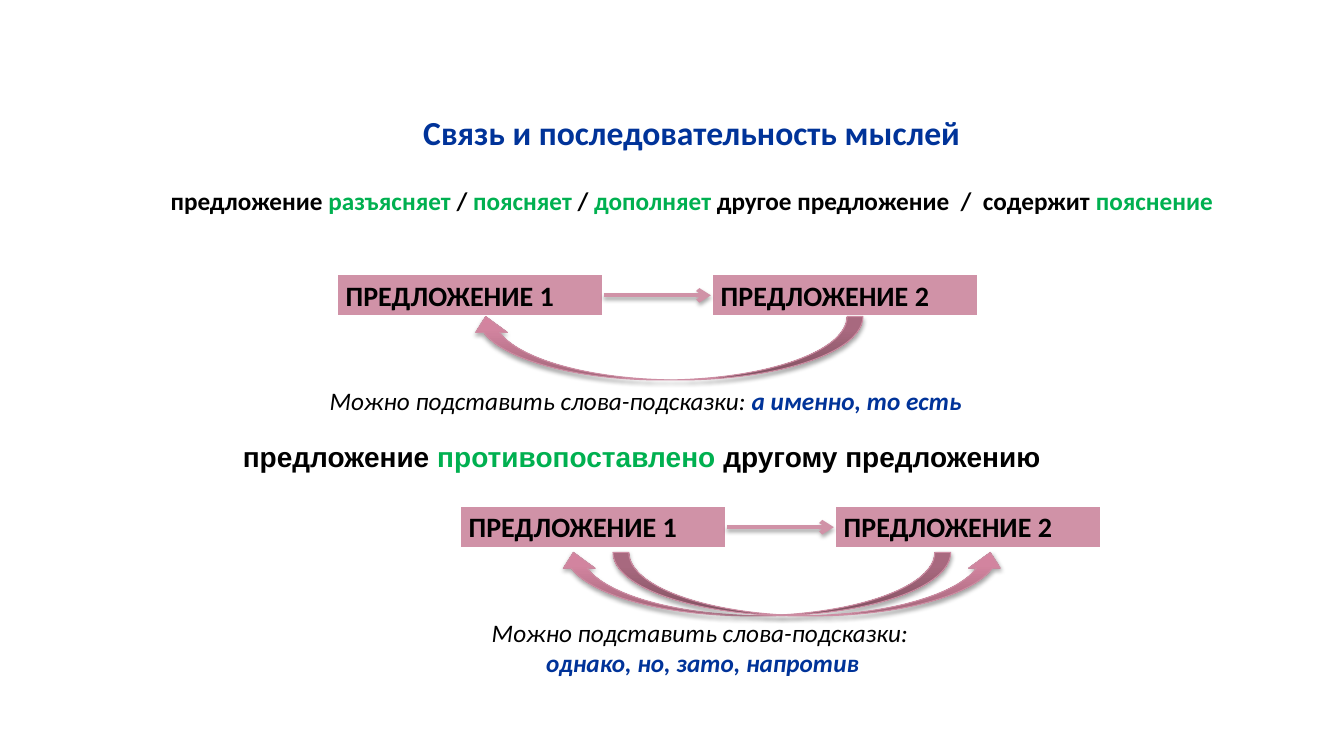
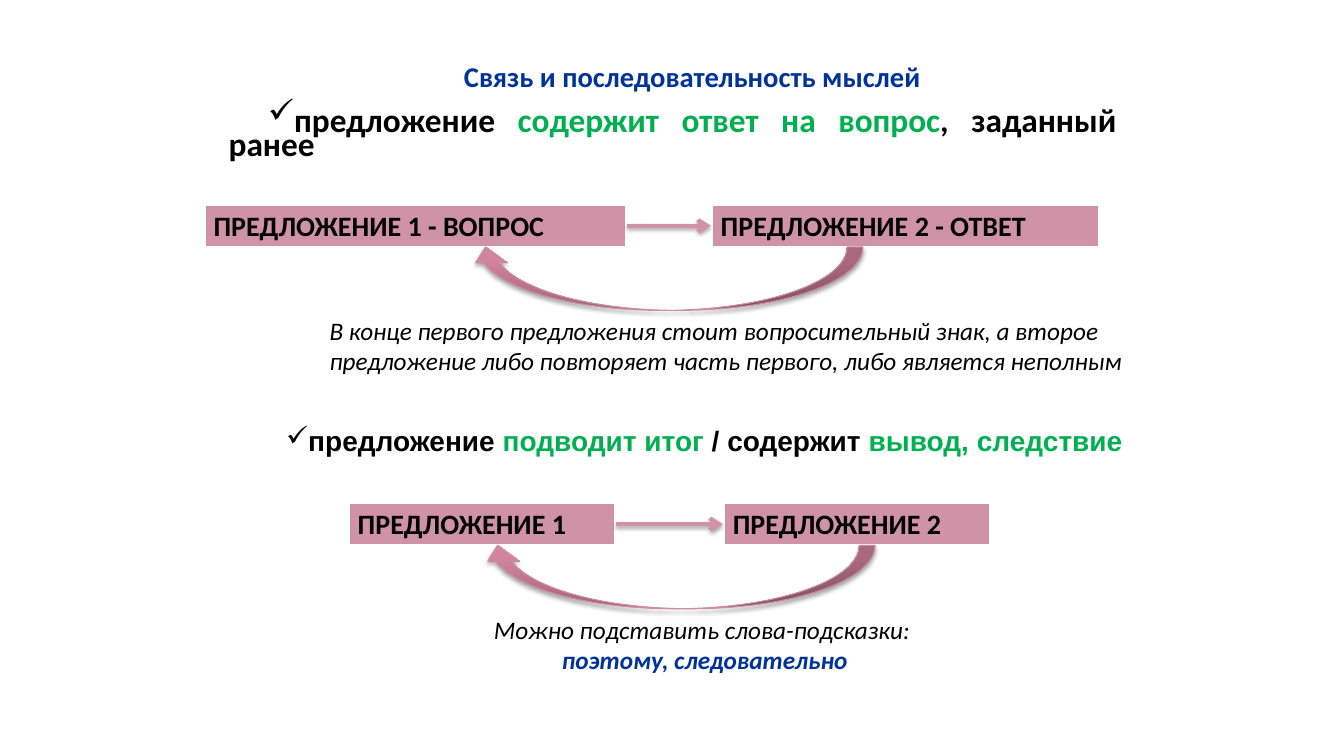
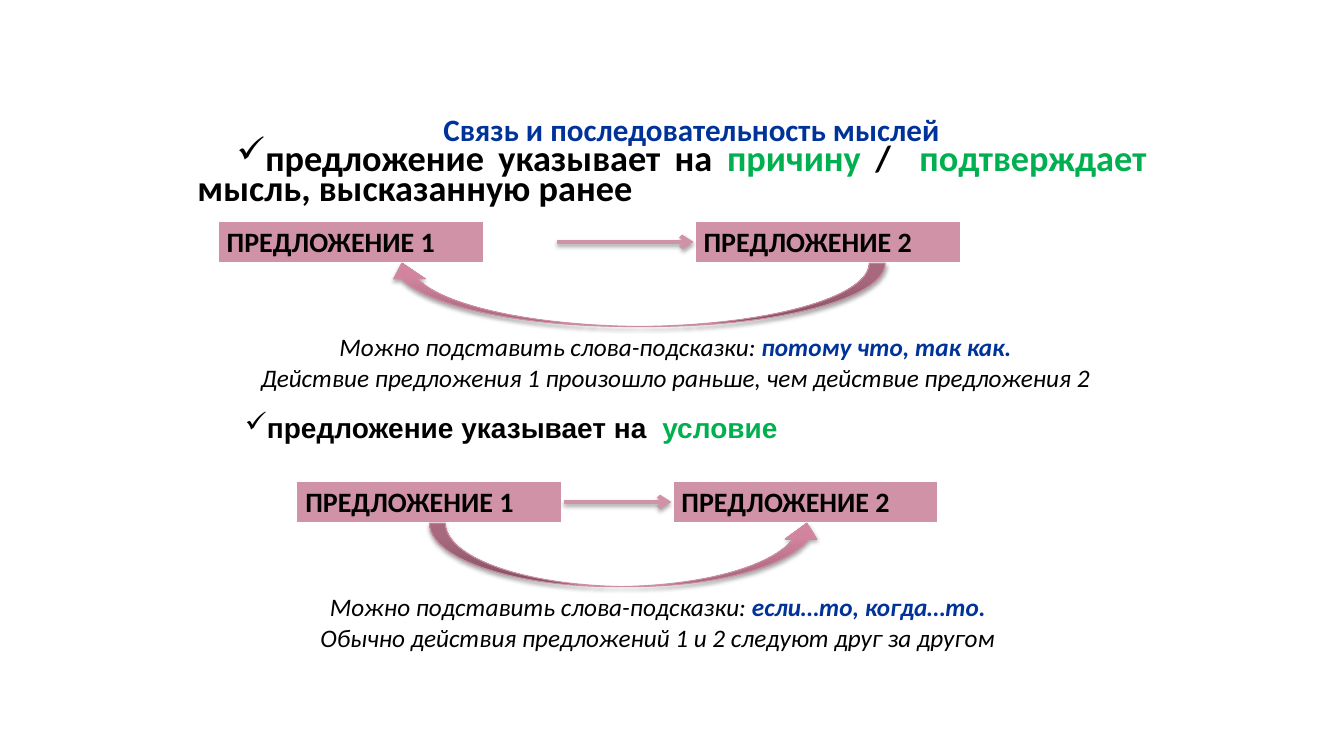
from copy import deepcopy
from dataclasses import dataclass

from lxml import etree
from pptx import Presentation
from pptx.dml.color import RGBColor
from pptx.enum.shapes import MSO_CONNECTOR, MSO_SHAPE
from pptx.enum.text import MSO_ANCHOR, PP_ALIGN
from pptx.oxml.ns import qn
from pptx.util import Inches, Pt

LEFT, CENTER, JUSTIFY = PP_ALIGN.LEFT, PP_ALIGN.CENTER, PP_ALIGN.JUSTIFY
TOP = MSO_ANCHOR.TOP
RECTANGLE, CURVED_ARROW = MSO_SHAPE.RECTANGLE, MSO_SHAPE.CURVED_UP_ARROW
STRAIGHT = MSO_CONNECTOR.STRAIGHT

BLACK, WHITE, BLUE, GREEN = "000000", "FFFFFF", "003399", "00B050"
PINK, CURVE_EDGE = "D092A7", "CD8DA3"
CURVE_STOPS = ((0, "A16478"), (0.8, "D2849F"), (1, "D5839F"))
BODY_FONT, HEADING_FONT = "Calibri", "Arial"
FIRST_LINE = 0.39
BOX_WIDTH, BOX_HEIGHT = 2.66, 0.44
CURVE_WIDTH, CURVE_HEIGHT = 3.9, 0.63
NOTE_DROP = 1.06
TITLE = "Связь и последовательность мыслей"
HINT = "Можно подставить слова-подсказки: "


@dataclass
class Span:
    text: str
    color: str = BLACK
    bold: bool = True
    italic: bool = False


@dataclass
class Para:
    spans: list[Span]
    size: float
    font: str = BODY_FONT
    align: PP_ALIGN = JUSTIFY
    spacing: float = 1.0
    before: float = 0
    margin: float = 0
    indent: float = 0
    bullet: bool = False


@dataclass
class TextArea:
    left: float
    top: float
    width: float
    height: float
    paras: list[Para]


@dataclass
class Curve:
    left: float
    width: float = CURVE_WIDTH
    drop: float = 0.43
    flipped: bool = True


@dataclass
class Scheme:
    top: float
    first_left: float
    second_left: float
    curves: list[Curve]
    note: TextArea
    first_width: float = BOX_WIDTH
    second_width: float = BOX_WIDTH
    arrow_gap: float = 0
    first_label: str = "ПРЕДЛОЖЕНИЕ 1"
    second_label: str = "ПРЕДЛОЖЕНИЕ 2"


@dataclass
class Page:
    texts: list[TextArea]
    schemes: list[Scheme]


def rgb(color: str) -> RGBColor:
    return RGBColor.from_string(color)


def title(size: float, spacing: float) -> Para:
    return Para([Span(TITLE, BLUE)], size, align=CENTER, spacing=spacing, indent=FIRST_LINE)


def point(spans: list[Span], size: float = 20, spacing: float = 0.8,
          font: str = HEADING_FONT, before: float = 0) -> Para:
    return Para(spans, size, font, spacing=spacing, before=before,
                indent=FIRST_LINE, bullet=True)


def plain(text: str) -> Span:
    return Span(text, bold=False, italic=True)


def hint(text: str) -> Span:
    return Span(text, BLUE, italic=True)


def note(left: float, top: float, width: float, lines: list[list[Span]],
         align: PP_ALIGN = CENTER, height: float = 0.71) -> TextArea:
    paras = [Para(spans, 18, align=align) for spans in lines]
    return TextArea(left, top + NOTE_DROP, width, height, paras)


def write(frame, paras: list[Para]) -> None:
    frame.word_wrap = True
    frame.vertical_anchor = TOP
    for number, item in enumerate(paras):
        para = frame.paragraphs[0] if number == 0 else frame.add_paragraph()
        para.alignment = item.align
        para.line_spacing = item.spacing
        para.space_before = Pt(item.before)
        properties = para._p.get_or_add_pPr()
        properties.set("marL", str(Inches(item.margin)))
        properties.set("indent", str(Inches(item.indent)))
        if item.bullet:
            etree.SubElement(properties, qn("a:buChar")).set("char", "✓")
        for piece in item.spans:
            span = para.add_run()
            span.text = piece.text
            span.font.name = item.font
            span.font.size = Pt(item.size)
            span.font.bold = piece.bold
            span.font.italic = piece.italic
            span.font.color.rgb = rgb(piece.color)


def add_text(page, area: TextArea) -> None:
    box = page.shapes.add_textbox(Inches(area.left), Inches(area.top),
                                  Inches(area.width), Inches(area.height))
    write(box.text_frame, area.paras)


def add_shadow(shape) -> None:
    effects = etree.SubElement(shape.element.spPr, qn("a:effectLst"))
    shadow = etree.SubElement(effects, qn("a:outerShdw"), blurRad=str(Pt(3.1)),
                              dist=str(Pt(1.8)), dir="5400000", rotWithShape="0")
    color = etree.SubElement(shadow, qn("a:srgbClr"), val=BLACK)
    etree.SubElement(color, qn("a:alpha"), val="35000")


def add_box(page, left: float, top: float, width: float, label: str) -> None:
    box = page.shapes.add_shape(RECTANGLE, Inches(left), Inches(top),
                                Inches(width), Inches(BOX_HEIGHT))
    box.shadow.inherit = False
    box.fill.solid()
    box.fill.fore_color.rgb = rgb(PINK)
    box.line.color.rgb = rgb(WHITE)
    box.line.width = Pt(3)
    write(box.text_frame, [Para([Span(label)], 20, align=LEFT)])


def add_arrow(page, start: float, end: float, y: float) -> None:
    arrow = page.shapes.add_connector(STRAIGHT, Inches(start), Inches(y), Inches(end), Inches(y))
    arrow.line.color.rgb = rgb(PINK)
    arrow.line.width = Pt(3)
    etree.SubElement(arrow.line._get_or_add_ln(), qn("a:tailEnd"), type="arrow")
    add_shadow(arrow)


def add_curve(page, curve: Curve, top: float) -> None:
    shape = page.shapes.add_shape(CURVED_ARROW, Inches(curve.left), Inches(top + curve.drop),
                                  Inches(curve.width), Inches(CURVE_HEIGHT))
    shape.fill.gradient()
    shape.fill.gradient_angle = 90
    stops = shape.element.spPr.find(".//" + qn("a:gsLst"))
    stops.append(deepcopy(stops[0]))
    for stop, (position, color) in zip(shape.fill.gradient_stops, CURVE_STOPS):
        stop.position = position
        stop.color.rgb = rgb(color)
    shape.line.color.rgb = rgb(CURVE_EDGE)
    shape.line.width = Pt(0.75)
    if curve.flipped:
        shape.element.spPr.find(qn("a:xfrm")).set("flipH", "1")
    add_shadow(shape)


def add_scheme(page, scheme: Scheme) -> None:
    add_box(page, scheme.first_left, scheme.top, scheme.first_width, scheme.first_label)
    add_box(page, scheme.second_left, scheme.top, scheme.second_width, scheme.second_label)
    start = scheme.first_left + scheme.first_width + scheme.arrow_gap
    add_arrow(page, start, scheme.second_left, scheme.top + BOX_HEIGHT / 2)
    add_text(page, scheme.note)
    for curve in scheme.curves:
        add_curve(page, curve, scheme.top)


PAGES = [
    Page(
        [TextArea(0.42, 1.14, 12.49, 1.34, [
            title(24, 0.8),
            Para([Span("предложение "), Span("разъясняет", GREEN), Span(" / "),
                  Span("поясняет", GREEN), Span(" / "), Span("дополняет", GREEN),
                  Span(" другое предложение  /  содержит "), Span("пояснение", GREEN)],
                 18, align=CENTER, spacing=0.8, before=28, indent=FIRST_LINE)]),
         TextArea(2.31, 4.38, 9, 0.85, [
             Para([Span("предложение "), Span("противопоставлено", GREEN),
                   Span(" другому предложению")],
                  20, HEADING_FONT, spacing=0.8, margin=0.38, indent=-0.38)])],
        [Scheme(2.71, 3.33, 7.05, [Curve(4.66)],
                note(3.17, 2.71, 7.12, [[plain(HINT), hint("а именно, то есть")]], LEFT, 0.4)),
         Scheme(5.01, 4.55, 8.27,
                [Curve(5.53, drop=0.47), Curve(6.08, drop=0.47, flipped=False)],
                note(2.47, 5.01, 9, [[plain(HINT)], [hint("однако, но, зато, напротив")]]))]),
    Page(
        [TextArea(2.17, 0.66, 9, 0.79, [
            title(20.4, 0.6),
            point([Span("предложение "), Span("содержит ответ на вопрос", GREEN),
                   Span(", заданный ранее")], 23.8, 0.6, BODY_FONT, 15)]),
         TextArea(2.35, 4.22, 9, 0.71, [
             point([Span("предложение "), Span("подводит итог", GREEN),
                    Span(" / содержит "), Span("вывод, следствие", GREEN)])])],
        [Scheme(2.02, 2.02, 7.05, [Curve(4.66)],
                note(3.17, 2.02, 8.18, [[plain(
                    "В конце первого предложения стоит вопросительный знак, а второе "
                    "предложение либо повторяет часть первого, либо является неполным")]],
                    LEFT, 1.01),
                4.2, 3.86, first_label="ПРЕДЛОЖЕНИЕ 1 - ВОПРОС",
                second_label="ПРЕДЛОЖЕНИЕ 2 - ОТВЕТ"),
         Scheme(4.98, 3.45, 7.17, [Curve(4.78)],
                note(4.63, 4.98, 4.72, [[plain(HINT)], [hint("поэтому, следовательно")]]))]),
    Page(
        [TextArea(1.86, 1.15, 9.61, 0.98, [
            title(22.2, 0.7),
            point([Span("предложение указывает на "), Span("причину", GREEN), Span(" /  "),
                   Span("подтверждает", GREEN), Span(" мысль, высказанную ранее")],
                  25.9, 0.7, BODY_FONT)]),
         TextArea(1.94, 4.09, 8.29, 0.37, [
             point([Span("предложение указывает на  "), Span("условие ", GREEN)])])],
        [Scheme(2.18, 2.15, 6.88, [Curve(3.83, 4.95)],
                note(2.07, 2.18, 9.26, [
                    [plain(HINT), hint("потому что, так как.")],
                    [plain("Действие предложения 1 произошло раньше, "
                           "чем действие предложения 2")]]),
                arrow_gap=0.71),
         Scheme(4.76, 2.93, 6.66, [Curve(4.26, flipped=False)],
                note(2.74, 4.76, 7.57, [
                    [plain(HINT), hint("если…то, когда…то.")],
                    [plain("Обычно действия предложений 1 и 2 следуют друг за другом")]]))]),
]


def main() -> None:
    """Build the deck on links between sentences."""
    deck = Presentation()
    deck.slide_width, deck.slide_height = Inches(13.33), Inches(7.5)
    for content in PAGES:
        page = deck.slides.add_slide(deck.slide_layouts[6])
        for area in content.texts:
            add_text(page, area)
        for scheme in content.schemes:
            add_scheme(page, scheme)
    deck.save("out.pptx")


if __name__ == "__main__":
    main()
